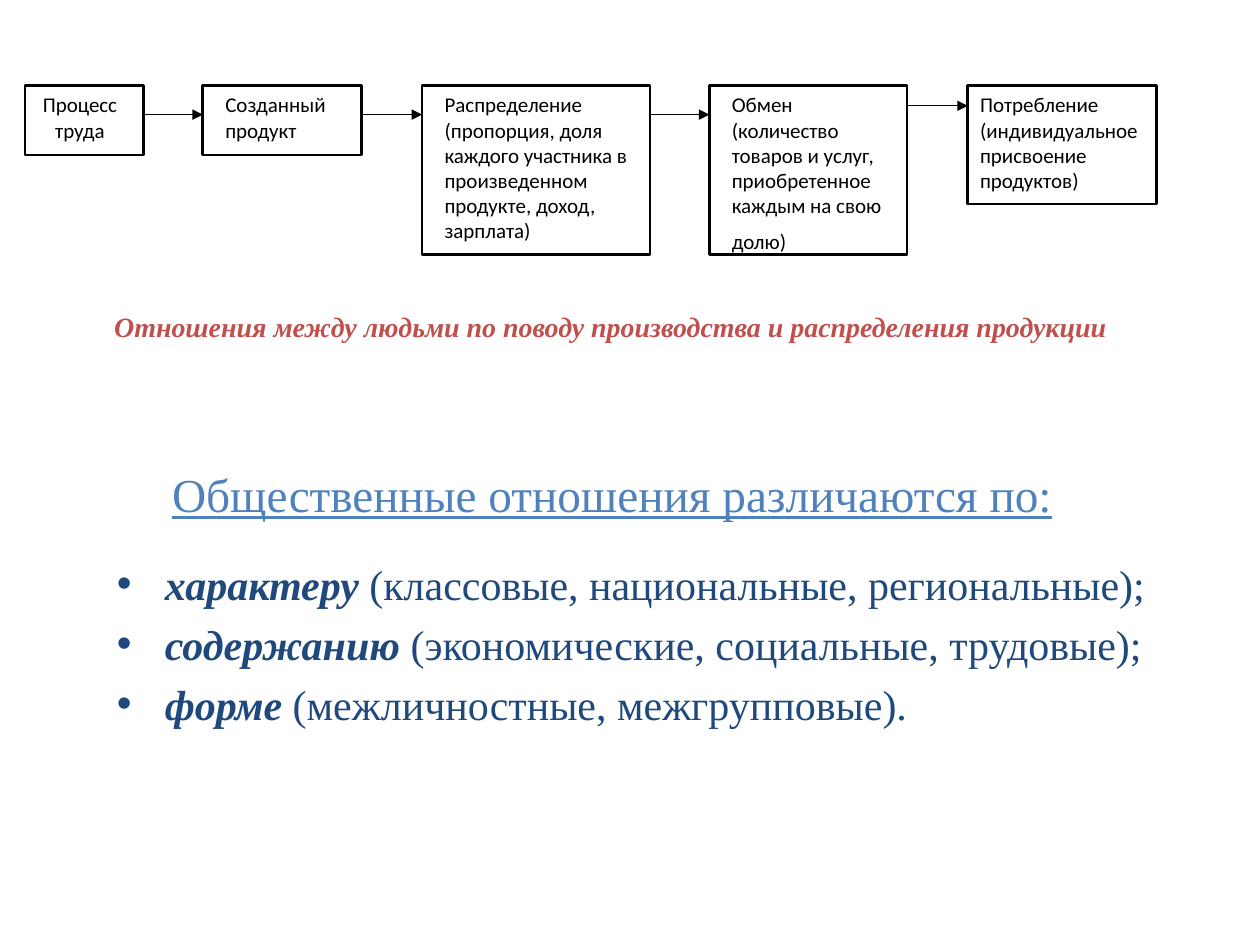
from lxml.etree import SubElement
from pptx import Presentation
from pptx.dml.color import RGBColor
from pptx.enum.shapes import MSO_CONNECTOR as Connector, MSO_SHAPE as Shape
from pptx.enum.text import MSO_ANCHOR as Anchor, PP_ALIGN as Align
from pptx.oxml.ns import qn
from pptx.util import Inches, Pt

BLACK = RGBColor(0x00, 0x00, 0x00)
BLUE = RGBColor(0x4F, 0x81, 0xBD)
NAVY = RGBColor(0x1F, 0x49, 0x7D)
RED = RGBColor(0xC0, 0x50, 0x4D)
SERIF, SANS = "Times New Roman", "Calibri"

LABEL = dict(name=SANS, size=12, color=BLACK)
CAPTION = dict(name=SERIF, size=16, color=RED, bold=True, italic=True)
HEADING = dict(name=SERIF, size=27, color=BLUE, underline=True)
HEADING_END = dict(name=SANS, size=33.3, color=BLACK)
DETAIL = dict(name=SERIF, size=24, color=NAVY)
TERM = dict(DETAIL, bold=True, italic=True)

FLOW_TOP = 0.68
# box left, width, height; label left, width, height; alignment; label runs
STAGES = [
    ((0.2, 0.94, 0.55), (0.2, 0.87, 0.5), Align.CENTER,
     [("Процесс труда", LABEL)]),
    ((1.61, 1.26, 0.55), (1.69, 1.1, 0.5), Align.LEFT,
     [("Созданный продукт", LABEL)]),
    ((3.35, 1.81, 1.34), (3.43, 1.81, 1.3), Align.LEFT,
     [("Распределение (пропорция, доля каждого участника в "
       "произведенном продукте, доход, зарплата)", LABEL)]),
    ((5.63, 1.57, 1.34), (5.71, 1.5, 1.4), Align.LEFT,
     [("Обмен (количество товаров и услуг, приобретенное каждым на свою долю)", LABEL),
      (" ", dict(LABEL, size=18))]),
    ((7.68, 1.5, 0.94), (7.68, 1.65, 0.9), Align.LEFT,
     [("Потребление (индивидуальное присвоение продуктов)", LABEL)]),
]
ARROW_HEIGHTS = [0.91, 0.91, 0.91, 0.84]
CRITERIA = [
    ("характеру ", "(классовые, национальные, региональные);"),
    ("содержанию ", "(экономические, социальные, трудовые);"),
    ("форме ", "(межличностные, межгрупповые)."),
]


def add_text(slide, bounds, paragraphs, align=Align.LEFT, anchor=Anchor.TOP):
    """Add a wrapped text box; each paragraph is a list of (text, format) runs."""
    frame = slide.shapes.add_textbox(*map(Inches, bounds)).text_frame
    frame.word_wrap = True
    frame.vertical_anchor = anchor
    for index, runs in enumerate(paragraphs):
        paragraph = frame.add_paragraph() if index else frame.paragraphs[0]
        paragraph.alignment = align
        for text, style in runs:
            run = paragraph.add_run()
            run.text = text
            for key, value in style.items():
                if key == "color":
                    run.font.color.rgb = value
                else:
                    setattr(run.font, key, Pt(value) if key == "size" else value)
    return frame


def add_bullet(paragraph):
    paragraph.space_before = Pt(5.5)
    properties = paragraph._p.get_or_add_pPr()
    properties.set("marL", str(Inches(0.38)))
    properties.set("indent", str(Inches(-0.38)))
    SubElement(properties, qn("a:buFont"), typeface="Arial")
    SubElement(properties, qn("a:buChar"), char="•")


def add_box(slide, left, width, height):
    box = slide.shapes.add_shape(
        Shape.RECTANGLE, *map(Inches, (left, FLOW_TOP, width, height)))
    box.shadow.inherit = False
    box.fill.background()
    box.line.color.rgb = BLACK
    box.line.width = Pt(1.5)


def add_arrow(slide, start, end, y):
    arrow = slide.shapes.add_connector(
        Connector.STRAIGHT, *map(Inches, (start, y, end, y)))
    arrow.line.color.rgb = BLACK
    arrow.line.width = Pt(0.75)
    SubElement(arrow.line._get_or_add_ln(), qn("a:tailEnd"), type="triangle")
    SubElement(arrow._element.spPr, qn("a:effectLst"))


def main():
    presentation = Presentation()
    presentation.slide_width, presentation.slide_height = Inches(10), Inches(7.5)
    slide = presentation.slides.add_slide(presentation.slide_layouts[6])

    add_text(slide, (0.41, 3.61, 9, 0.54),
             [[("Общественные отношения различаются по:", HEADING), (" ", HEADING_END)]],
             Align.CENTER, Anchor.MIDDLE)
    criteria = add_text(slide, (0.83, 4.38, 8.51, 1.9),
                        [[(term, TERM), (detail, DETAIL)] for term, detail in CRITERIA])
    for paragraph in criteria.paragraphs:
        add_bullet(paragraph)
    add_text(slide, (0, 2.41, 9.69, 0.37),
             [[("Отношения между людьми по поводу производства и распределения продукции",
                CAPTION)]], Align.CENTER)

    for box, (left, width, height), align, runs in STAGES:
        add_box(slide, *box)
        add_text(slide, (left, FLOW_TOP, width, height), [runs], align)
    boxes = [stage[0] for stage in STAGES]
    for (left, width, _), following, y in zip(boxes, boxes[1:], ARROW_HEIGHTS):
        add_arrow(slide, left + width, following[0], y)

    presentation.save("out.pptx")


if __name__ == "__main__":
    main()
